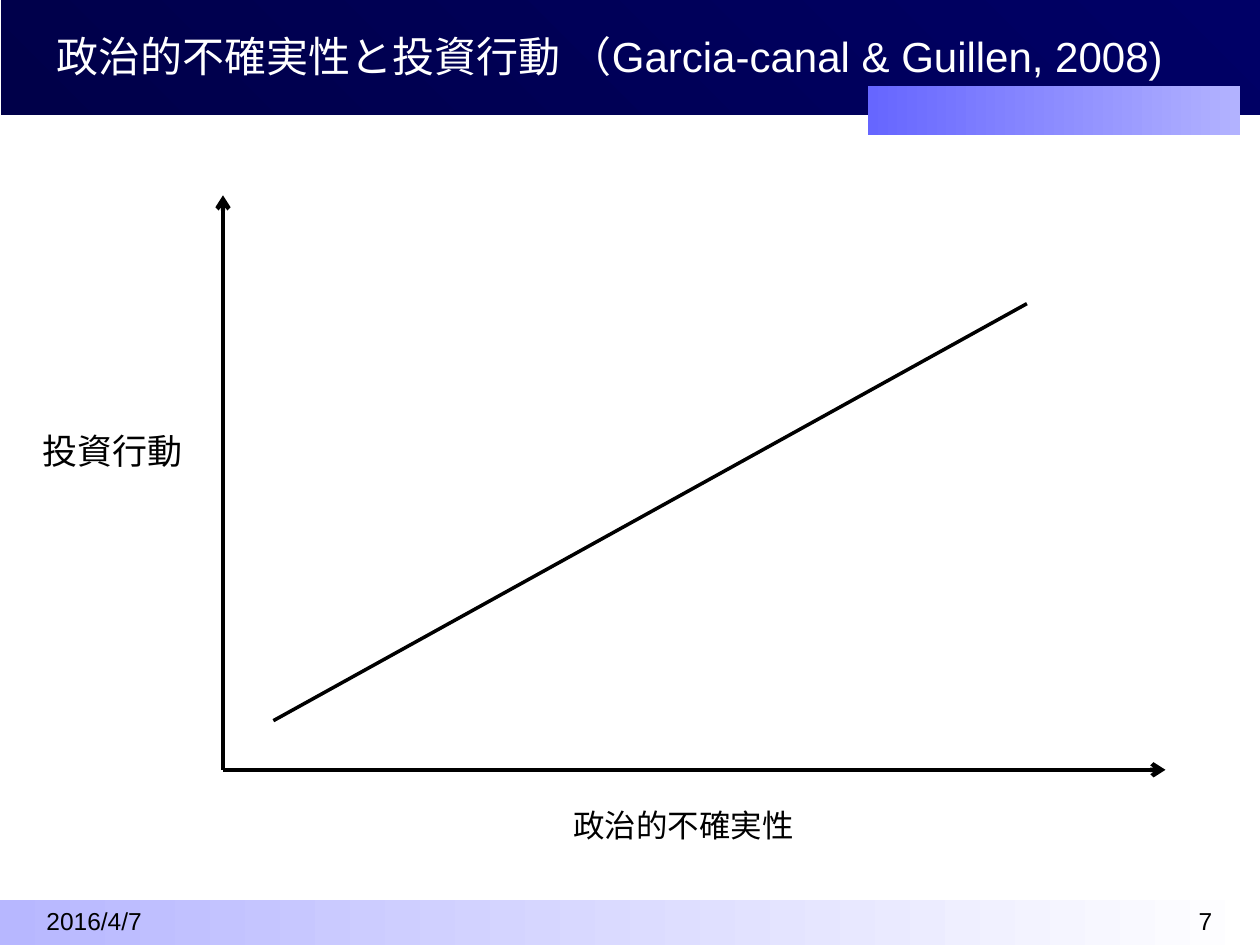
"""Build a slide plotting investment behaviour against political uncertainty."""
from dataclasses import dataclass

from lxml.etree import SubElement
from pptx import Presentation
from pptx.dml.color import RGBColor
from pptx.enum.shapes import MSO_CONNECTOR, MSO_SHAPE
from pptx.enum.text import MSO_ANCHOR, PP_ALIGN
from pptx.oxml.ns import qn
from pptx.slide import Slide
from pptx.util import Inches, Pt

BLACK = RGBColor(0x00, 0x00, 0x00)
WHITE = RGBColor(0xFF, 0xFF, 0xFF)
LAVENDER = RGBColor(0xB7, 0xB7, 0xFF)
MIDNIGHT = RGBColor(0x00, 0x00, 0x49)
NAVY = RGBColor(0x00, 0x00, 0x66)
VIOLET = RGBColor(0x66, 0x66, 0xFF)
LILAC = RGBColor(0xB2, 0xB2, 0xFF)
FONT = "Arial"
ORIGIN = (1.77, 6.11)


@dataclass(frozen=True)
class Band:
    box: tuple[float, float, float, float]
    start: RGBColor
    end: RGBColor
    angle: float = 0


@dataclass(frozen=True)
class Label:
    text: str
    box: tuple[float, float, float, float]
    size: int
    color: RGBColor = BLACK
    anchor: MSO_ANCHOR = MSO_ANCHOR.MIDDLE
    align: PP_ALIGN = PP_ALIGN.LEFT


@dataclass(frozen=True)
class Line:
    start: tuple[float, float]
    end: tuple[float, float]
    width: float = 2.5
    arrow: bool = True


BANDS = [
    Band((0, 7.14, 10, 0.36), LAVENDER, WHITE),
    Band((0.01, 0, 9.99, 0.91), MIDNIGHT, NAVY, 45),
    Band((6.89, 0.68, 2.95, 0.39), VIOLET, LILAC),
]
LINES = [
    Line((2.17, 5.72), (8.15, 2.41), width=2, arrow=False),
    Line(ORIGIN, (ORIGIN[0], 1.55)),
    Line(ORIGIN, (9.25, ORIGIN[1])),
]
LABELS = [
    Label("政治的不確実性と投資行動 （Garcia-canal & Guillen, 2008)",
          (0.35, -0.02, 10.32, 0.93), 24, WHITE),
    Label("2016/4/7", (0.27, 7.16, 2.33, 0.29), 14),
    Label("7", (7.39, 7.16, 2.33, 0.29), 14, align=PP_ALIGN.RIGHT),
    Label("投資行動", (0.24, 3.36, 1.77, 0.44), 20, anchor=MSO_ANCHOR.TOP),
    Label("政治的不確実性", (4.45, 6.35, 3.31, 0.4), 18, anchor=MSO_ANCHOR.TOP),
]


def add_band(s: Slide, band: Band) -> None:
    """Draw a borderless rectangle with a two-colour gradient."""
    sp = s.shapes.add_shape(MSO_SHAPE.RECTANGLE, *map(Inches, band.box))
    sp.shadow.inherit = False
    sp.line.fill.background()
    sp.fill.gradient()
    sp.fill.gradient_angle = band.angle
    for stop, color in zip(sp.fill.gradient_stops, (band.start, band.end)):
        stop.color.rgb = color
    first, last = sp.fill.gradient_stops
    first.position, last.position = 0, 1


def add_line(s: Slide, line: Line) -> None:
    """Draw a straight black line, with an arrowhead at its end if asked."""
    sp = s.shapes.add_connector(MSO_CONNECTOR.STRAIGHT, *map(Inches, line.start + line.end))
    sp.line.color.rgb = BLACK
    sp.line.width = Pt(line.width)
    if line.arrow:
        SubElement(sp.line._get_or_add_ln(), qn("a:tailEnd"), type="arrow")
    SubElement(sp._element.spPr, qn("a:effectLst"))


def add_label(s: Slide, label: Label) -> None:
    """Place one paragraph of text in a wrapping text box."""
    tf = s.shapes.add_textbox(*map(Inches, label.box)).text_frame
    tf.word_wrap = True
    tf.vertical_anchor = label.anchor
    p = tf.paragraphs[0]
    p.text = label.text
    p.alignment = label.align
    p.font.name = FONT
    p.font.size = Pt(label.size)
    p.font.color.rgb = label.color


def main() -> None:
    """Assemble and save the slide."""
    prs = Presentation()
    prs.slide_width, prs.slide_height = Inches(10), Inches(7.5)
    s = prs.slides.add_slide(prs.slide_layouts[6])
    for band in BANDS:
        add_band(s, band)
    for line in LINES:
        add_line(s, line)
    for label in LABELS:
        add_label(s, label)
    prs.save("out.pptx")


if __name__ == "__main__":
    main()
